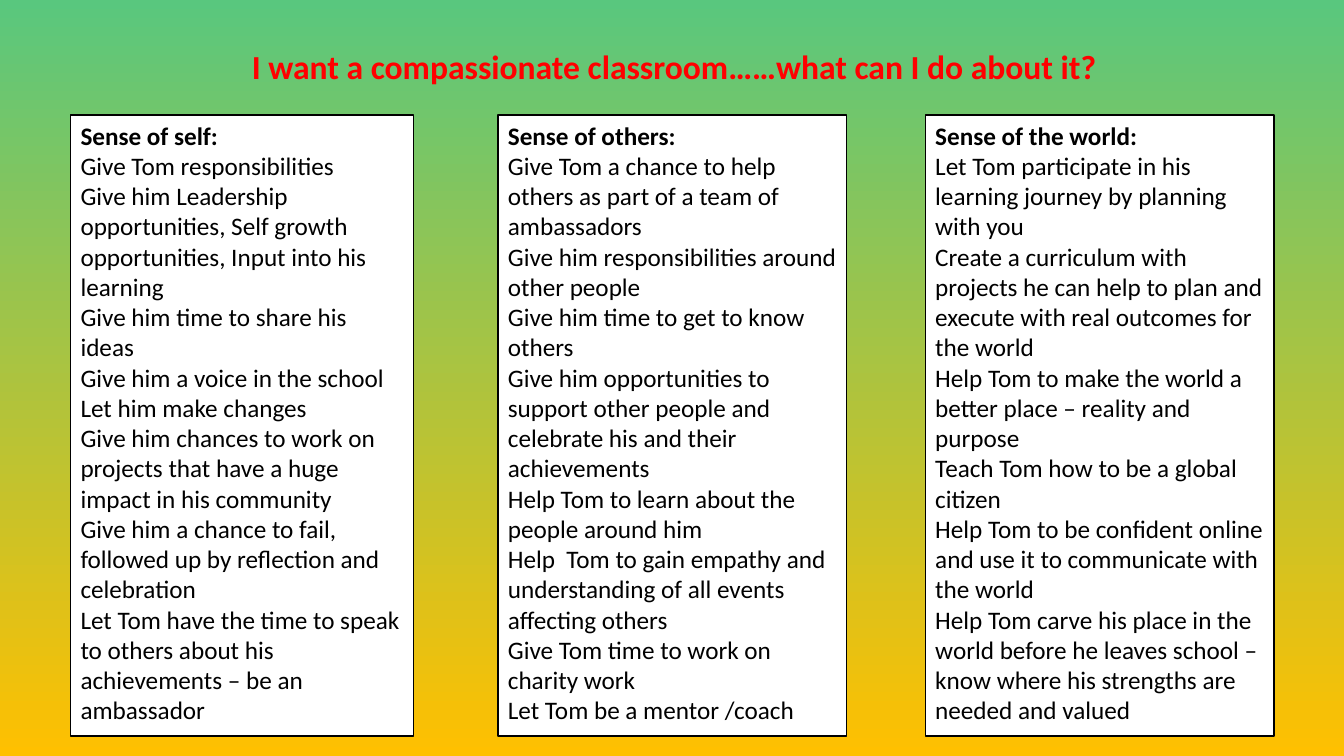
from pptx import Presentation
from pptx.dml.color import RGBColor
from pptx.enum.shapes import MSO_SHAPE
from pptx.enum.text import MSO_ANCHOR, MSO_AUTO_SIZE, PP_ALIGN
from pptx.util import Cm, Pt

GREEN = RGBColor(0x59, 0xC7, 0x7E)
AMBER = RGBColor(0xFF, 0xC0, 0x00)
RED = RGBColor(0xFF, 0x00, 0x00)
BLACK = RGBColor(0x00, 0x00, 0x00)
WHITE = RGBColor(0xFF, 0xFF, 0xFF)

TITLE = "I want a compassionate classroom……what can I do about it?"
LEFT, STEP = 1.78, 10.77

# Each panel: width in cm, heading, ideas
PANELS = [
    (8.64, "Sense of self:", [
        "Give Tom responsibilities",
        "Give him Leadership opportunities, Self growth opportunities, "
        "Input into his learning",
        "Give him time to share his ideas",
        "Give him a voice in the school",
        "Let him make changes",
        "Give him chances to work on projects that have a huge impact "
        "in his community",
        "Give him a chance to fail, followed up by reflection and celebration",
        "Let Tom have the time to speak to others about his achievements "
        "– be an ambassador",
    ]),
    (8.79, "Sense of others:", [
        "Give Tom a chance to help others as part of a team of ambassadors",
        "Give him responsibilities around other people",
        "Give him time to get to know others",
        "Give him opportunities to support other people and celebrate his "
        "and their achievements",
        "Help Tom to learn about the people around him",
        "Help  Tom to gain empathy and understanding of all events "
        "affecting others",
        "Give Tom time to work on charity work",
        "Let Tom be a mentor /coach",
    ]),
    (8.79, "Sense of the world:", [
        "Let Tom participate in his learning journey by planning with you",
        "Create a curriculum with projects he can help to plan and execute "
        "with real outcomes for the world",
        "Help Tom to make the world a better place – reality and purpose",
        "Teach Tom how to be a global citizen",
        "Help Tom to be confident online and use it to communicate with "
        "the world",
        "Help Tom carve his place in the world before he leaves school – "
        "know where his strengths are needed and valued",
    ]),
]


class Page:
    font = "Calibri"

    def __init__(self, slide):
        self.slide = slide

    def backdrop(self, top, base):
        fill = self.slide.background.fill
        fill.gradient()
        fill.gradient_angle = 270
        for stop, color, place in zip(fill.gradient_stops, (top, base), (0, 1)):
            stop.color.rgb = color
            stop.position = place

    def set_text(self, frame, lines, size, color):
        """Fill the frame with one paragraph per line, the first one bold."""
        frame.word_wrap = True
        frame.auto_size = MSO_AUTO_SIZE.SHAPE_TO_FIT_TEXT
        frame.vertical_anchor = MSO_ANCHOR.TOP
        frame.text = "\n".join(lines)
        for i, para in enumerate(frame.paragraphs):
            para.alignment = PP_ALIGN.LEFT
            para.font.name = self.font
            para.font.size = Pt(size)
            para.font.bold = i == 0
            para.font.color.rgb = color

    def title(self, text, x, y, w, h):
        box = self.slide.shapes.add_textbox(Cm(x), Cm(y), Cm(w), Cm(h))
        self.set_text(box.text_frame, [text], 24, RED)

    def panel(self, lines, x, y, w, h):
        box = self.slide.shapes.add_shape(
            MSO_SHAPE.RECTANGLE, Cm(x), Cm(y), Cm(w), Cm(h))
        box.shadow.inherit = False
        box.fill.solid()
        box.fill.fore_color.rgb = WHITE
        box.line.color.rgb = BLACK
        box.line.width = Pt(1)
        self.set_text(box.text_frame, lines, 18, BLACK)


def main():
    deck = Presentation()
    deck.slide_width, deck.slide_height = Cm(33.87), Cm(19.05)
    page = Page(deck.slides.add_slide(deck.slide_layouts[6]))
    page.backdrop(GREEN, AMBER)
    page.title(TITLE, 6.1, 1.04, 22.15, 1.27)
    for i, (width, head, ideas) in enumerate(PANELS):
        page.panel([head, *ideas], LEFT + i * STEP, 2.9, width, 15.65)
    deck.save("out.pptx")


if __name__ == "__main__":
    main()
